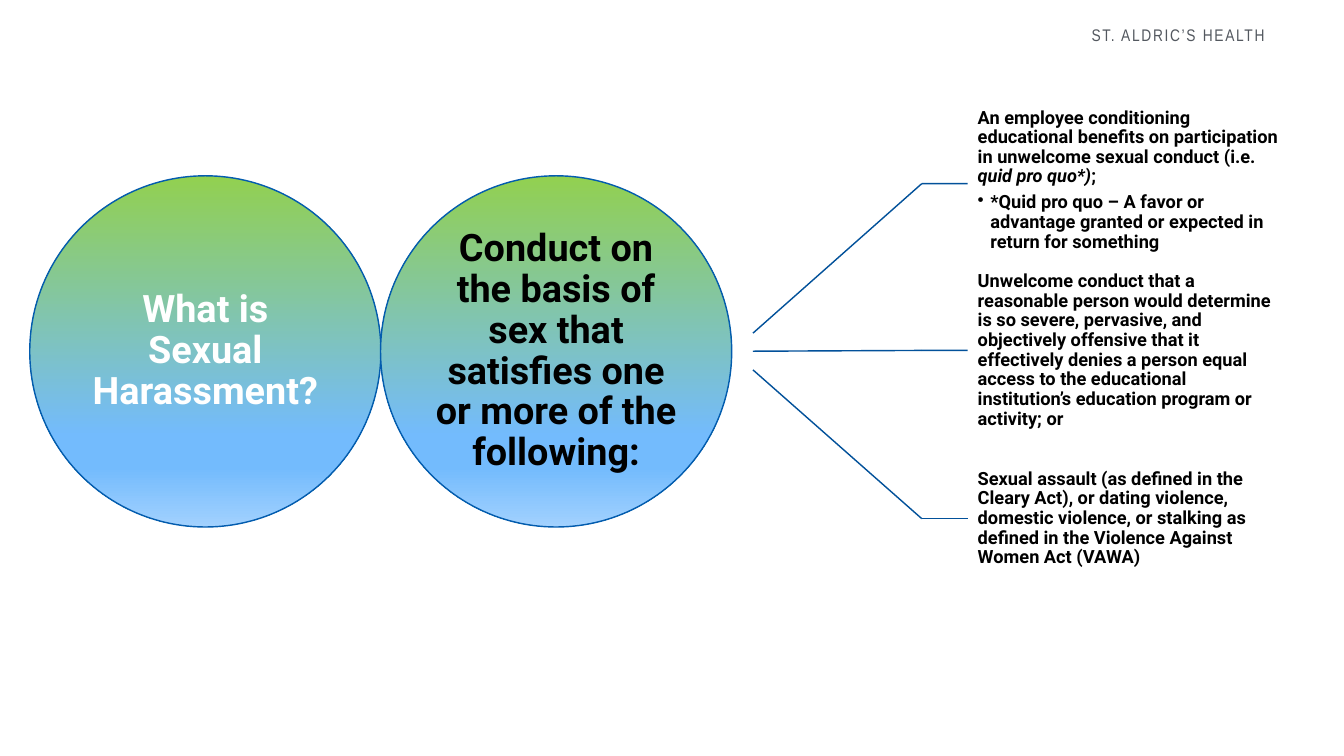
from lxml import etree
from pptx import Presentation, util as u
from pptx.dml.color import RGBColor
from pptx.enum import shapes, text
from pptx.oxml.ns import qn

FADE = [(0, "92D050"), (74, "73BBFD"), (83, "73BBFD"), (100, "A2D1FE")]
ITEMS = [
    (4.95, 8.61, 16.79, text.MSO_ANCHOR.TOP, [
        ("An employee conditioning educational benefits on participation "
         "in unwelcome sexual conduct (i.e. ", False),
        ("quid pro quo*)", True), (";", False)],
     "*Quid pro quo – A favor or advantage granted or expected in return for something"),
    (13.56, 8.2, 17.7, text.MSO_ANCHOR.MIDDLE, [
        ("Unwelcome conduct that a reasonable person would determine is so severe, "
         "pervasive, and objectively offensive that it effectively denies a person "
         "equal access to the educational institution’s education program or "
         "activity; or", False)], None),
    (21.77, 8.74, 18.64, text.MSO_ANCHOR.MIDDLE, [
        ("Sexual assault (as defined in the Cleary Act), or dating violence, "
         "domestic violence, or stalking as defined in the Violence Against "
         "Women Act (VAWA)", False)], None),
]


def rgb(code):
    """Turn a hex string into a colour."""
    return RGBColor.from_string(code)


def add_run(para, words, size, color, font="Roboto", bold=True, slant=False):
    """Add one styled run to a paragraph."""
    run = para.add_run()
    run.text = words
    face = run.font
    face.name, face.size, face.bold, face.italic = font, u.Pt(size), bold, slant
    face.color.rgb = rgb(color)
    return run


def set_frame(frame, inset, anchor):
    """Set wrapping, margins and anchor of a text frame."""
    frame.word_wrap = True
    frame.vertical_anchor = anchor
    frame.margin_left = frame.margin_right = u.Cm(inset)
    frame.margin_top = frame.margin_bottom = u.Cm(inset)


def add_box(slide, left, top, width, height, inset, anchor):
    """Add an empty text box."""
    box = slide.shapes.add_textbox(u.Cm(left), u.Cm(top), u.Cm(width), u.Cm(height))
    set_frame(box.text_frame, inset, anchor)
    return box


def set_fade(shape):
    """Fill a shape with the top-to-bottom gradient."""
    shape.fill.gradient()
    shape.fill.gradient_angle = 270
    stops = next(shape._element.spPr.iter(qn("a:gsLst")))
    for stop in list(stops):
        stops.remove(stop)
    for place, color in FADE:
        stop = etree.SubElement(stops, qn("a:gs"), pos=str(place * 1000))
        etree.SubElement(stop, qn("a:srgbClr"), val=color)


def add_disc(slide, left, words, color):
    """Add a gradient circle with a heading."""
    disc = slide.shapes.add_shape(shapes.MSO_SHAPE.OVAL, u.Cm(left), u.Cm(8.86),
                                  u.Cm(17.7), u.Cm(17.7))
    disc.shadow.inherit = False
    set_fade(disc)
    disc.line.color.rgb = rgb("035CAE")
    disc.line.width = u.Pt(2)
    set_frame(disc.text_frame, 0, text.MSO_ANCHOR.MIDDLE)
    para = disc.text_frame.paragraphs[0]
    para.alignment = text.PP_ALIGN.CENTER
    para.line_spacing = 0.9
    add_run(para, words, 54, color)


def add_line(slide, *ends):
    """Add a straight line from x, y to x, y."""
    line = slide.shapes.add_connector(shapes.MSO_CONNECTOR.STRAIGHT,
                                      *[u.Cm(end) for end in ends])
    line.line.color.rgb = rgb("02519A")
    line.line.width = u.Pt(2)
    etree.SubElement(line._element.spPr, qn("a:effectLst"))
    return line


def add_bullet(para):
    """Give a paragraph a hanging bullet."""
    props = para._p.get_or_add_pPr()
    props.set("marL", str(u.Cm(0.64)))
    props.set("indent", str(-u.Cm(0.64)))
    etree.SubElement(props, qn("a:buChar"), char="•")


def add_item(slide, top, height, start, anchor, parts, note):
    """Add a text item and the bent leader that reaches it."""
    box = add_box(slide, 48.77, top, 16.46, height, 0.51, anchor)
    para = box.text_frame.paragraphs[0]
    para.line_spacing = 0.9
    for words, slant in parts:
        add_run(para, words, 26, "000000", slant=slant)
    if note:
        para.space_after = u.Pt(9)
        para = box.text_frame.add_paragraph()
        add_bullet(para)
        para.line_spacing = 0.9
        add_run(para, note, 26, "000000")
    mid = top + height / 2
    add_line(slide, 37.95, start, 46.46, mid)
    add_line(slide, 46.46, mid, 48.77, mid).end_connect(box, 1)


def add_head(slide):
    """Add the organisation name at the top right."""
    box = add_box(slide, 52.7, 0.36, 11.2, 2.82, 0.15, text.MSO_ANCHOR.MIDDLE)
    para = box.text_frame.paragraphs[0]
    para.alignment = text.PP_ALIGN.RIGHT
    run = add_run(para, "ST. ALDRIC’S HEALTH", 24, "53585F", "Arial Narrow", False)
    run.font._element.set("spc", "240")


def main():
    """Build and save the slide."""
    deck = Presentation()
    deck.slide_width, deck.slide_height = u.Cm(67.74), u.Cm(38.1)
    slide = deck.slides.add_slide(deck.slide_layouts[6])
    add_head(slide)
    add_disc(slide, 1.5, "What is Sexual Harassment?", "FFFFFF")
    add_disc(slide, 19.18, "Conduct on the basis of sex that satisfies one "
             "or more of the following:", "000000")
    for item in ITEMS:
        add_item(slide, *item)
    deck.save("out.pptx")


if __name__ == "__main__":
    main()
